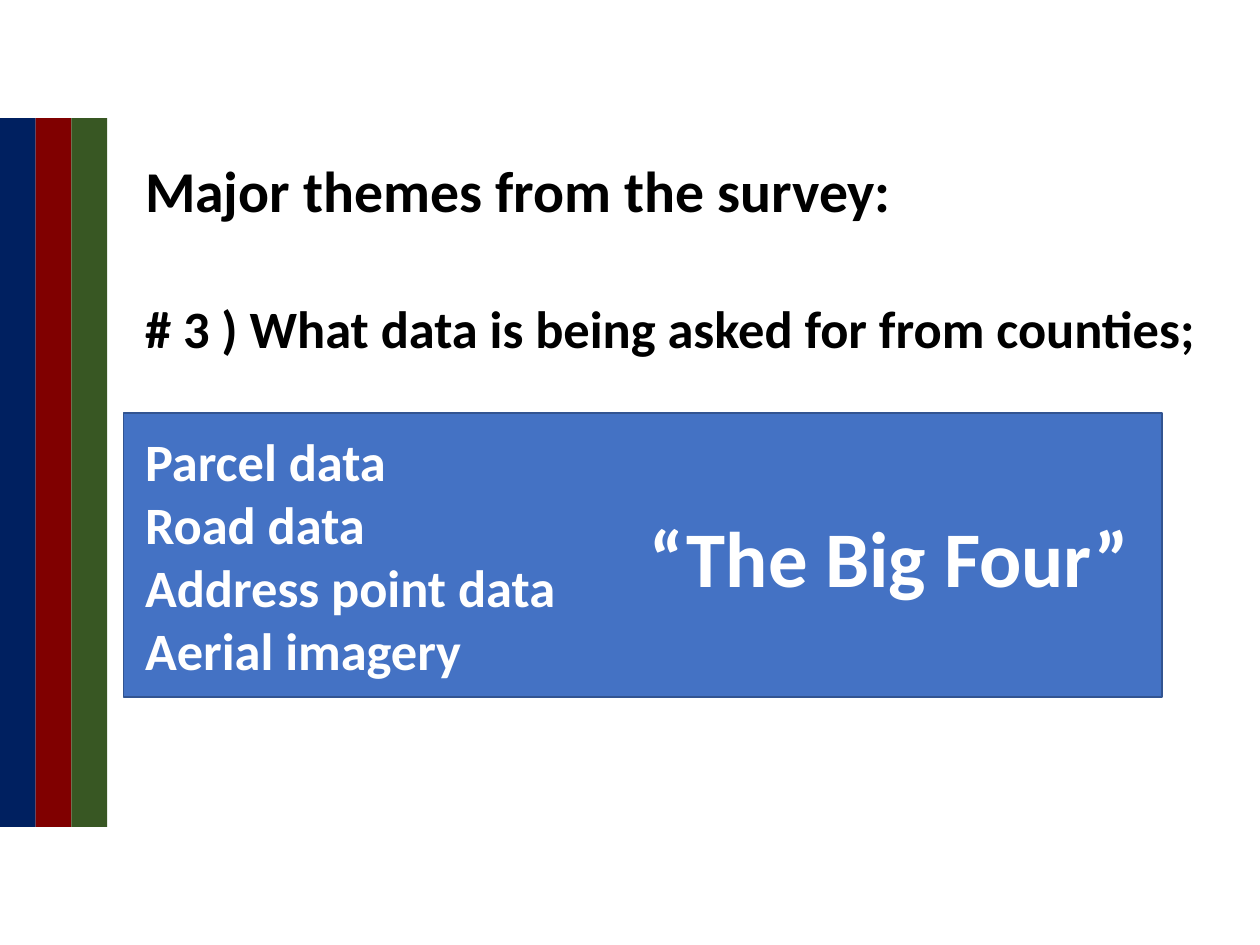
from dataclasses import dataclass

from pptx import Presentation
from pptx.dml.color import RGBColor
from pptx.enum.shapes import MSO_SHAPE
from pptx.enum.text import MSO_ANCHOR, MSO_AUTO_SIZE, PP_ALIGN
from pptx.oxml.xmlchemy import OxmlElement
from pptx.util import Cm, Pt

RECTANGLE = MSO_SHAPE.RECTANGLE
TOP = MSO_ANCHOR.TOP
NO_AUTOFIT = MSO_AUTO_SIZE.NONE
LEFT = PP_ALIGN.LEFT
TITLE_AND_CONTENT = 1


@dataclass(frozen=True)
class Theme:
    font: str = "Calibri"
    dark: str = "000000"
    light: str = "FFFFFF"
    panel: str = "4472C4"
    panel_line: str = "325491"
    stripes: tuple = ("002060", "800000", "385723")
    title_size: int = 33
    body_size: int = 30
    callout_size: int = 45
    blank_line: int = 40


@dataclass(frozen=True)
class Box:
    left: float
    top: float
    width: float
    height: float

    def lengths(self):
        return Cm(self.left), Cm(self.top), Cm(self.width), Cm(self.height)


THEME = Theme()


def add_rectangle(slide, box, fill, line=None):
    shape = slide.shapes.add_shape(RECTANGLE, *box.lengths())
    shape.shadow.inherit = False
    shape.fill.solid()
    shape.fill.fore_color.rgb = RGBColor.from_string(fill)
    if line:
        shape.line.color.rgb = RGBColor.from_string(line)
        shape.line.width = Pt(1)
    else:
        shape.line.fill.background()


def place_text(shape, box):
    shape.left, shape.top, shape.width, shape.height = box.lengths()
    frame = shape.text_frame
    frame.word_wrap = True
    frame.auto_size = NO_AUTOFIT
    frame.vertical_anchor = TOP
    return frame


def write_paragraph(paragraph, text, size, color, space_before=0):
    paragraph.alignment = LEFT
    paragraph.space_before = Pt(space_before)
    run = paragraph.add_run()
    run.text = text
    run.font.name = THEME.font
    run.font.size = Pt(size)
    run.font.bold = True
    run.font.color.rgb = RGBColor.from_string(color)


def remove_bullet(paragraph):
    properties = paragraph._p.get_or_add_pPr()
    properties.set("marL", "0")
    properties.set("indent", "0")
    properties.append(OxmlElement("a:buNone"))


def add_stripes(slide, box):
    width = box.width / len(THEME.stripes)
    for index, color in enumerate(THEME.stripes):
        stripe = Box(box.left + index * width, box.top, width, box.height)
        add_rectangle(slide, stripe, color)


def add_panel(slide, box, callout):
    add_rectangle(slide, box, THEME.panel, THEME.panel_line)
    offset = 10.36
    callout_box = Box(box.left + offset, box.top + 1.8, box.width - offset, 2.18)
    text_box = slide.shapes.add_textbox(*callout_box.lengths())
    frame = place_text(text_box, callout_box)
    write_paragraph(frame.paragraphs[0], callout, THEME.callout_size, THEME.light)


def fill_content(slide, box, title, question, answers):
    title_height, body_offset = 1.68, 2.84
    heading = slide.shapes.title
    body = slide.placeholders[1]
    for placeholder in (heading, body):
        slide.shapes._spTree.append(placeholder._element)

    frame = place_text(heading, Box(box.left, box.top, box.width, title_height))
    write_paragraph(frame.paragraphs[0], title, THEME.title_size, THEME.dark)

    frame = place_text(body, Box(box.left, box.top + body_offset, box.width, box.height - body_offset))
    write_paragraph(frame.paragraphs[0], question, THEME.body_size, THEME.dark)
    for index, answer in enumerate(answers):
        gap = THEME.blank_line if index == 0 else 0
        write_paragraph(frame.add_paragraph(), answer, THEME.body_size, THEME.light, gap)
    for paragraph in frame.paragraphs:
        remove_bullet(paragraph)


def main():
    presentation = Presentation()
    presentation.slide_width = Cm(25.4)
    presentation.slide_height = Cm(19.05)
    slide = presentation.slides.add_slide(presentation.slide_layouts[TITLE_AND_CONTENT])

    add_panel(slide, Box(2.49, 8.33, 20.93, 5.72), "“The Big Four”")
    add_stripes(slide, Box(0, 2.38, 2.16, 14.29))
    fill_content(
        slide,
        Box(2.67, 3, 22.2, 10.9),
        "Major themes from the survey:",
        "# 3 ) What data is being asked for from counties;",
        ["Parcel data", "Road data", "Address point data", "Aerial imagery"],
    )
    presentation.save("out.pptx")


if __name__ == "__main__":
    main()
